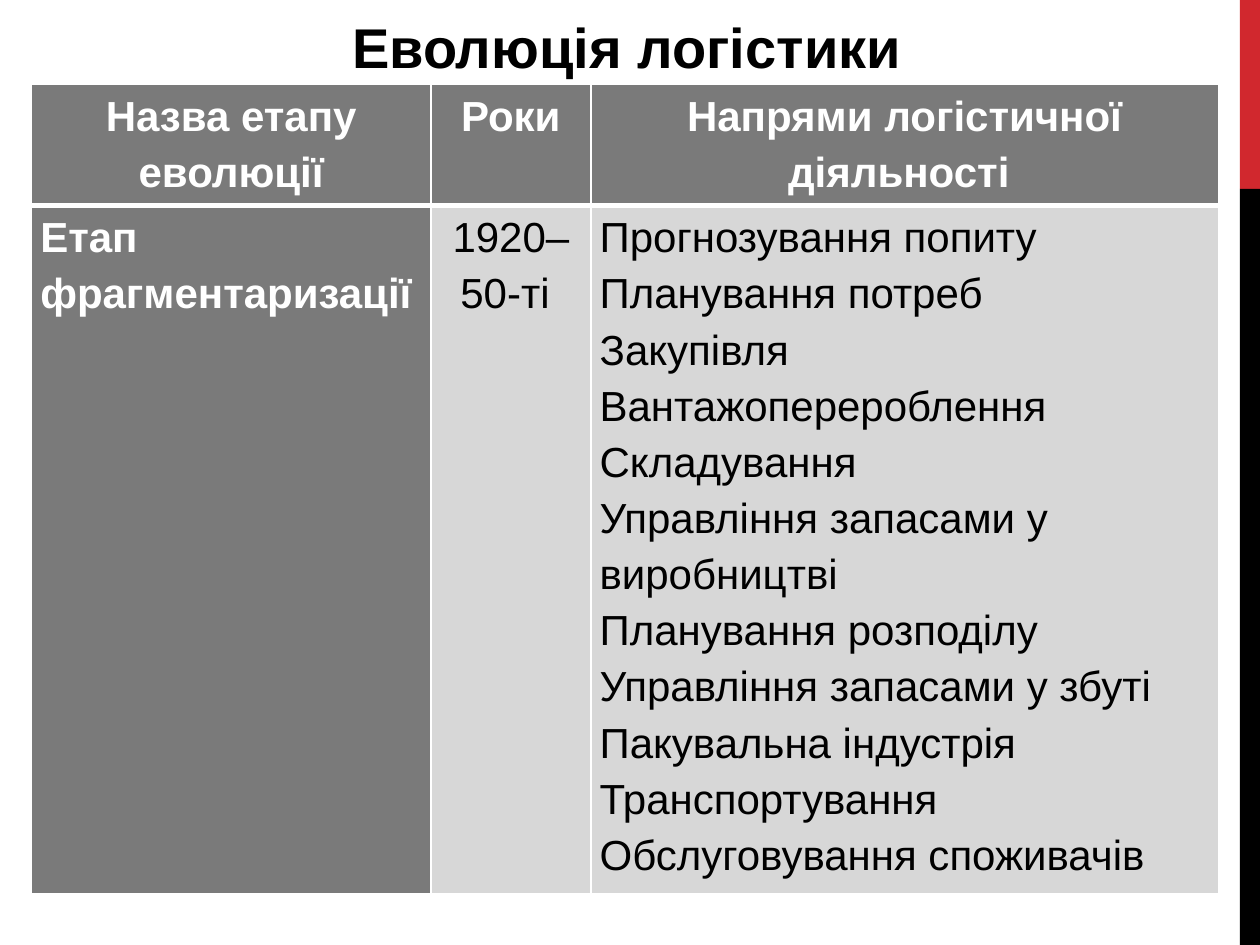
from lxml import etree
from pptx import Presentation
from pptx.dml.color import RGBColor
from pptx.enum.shapes import MSO_SHAPE
from pptx.enum.text import MSO_ANCHOR, PP_ALIGN
from pptx.oxml.ns import qn
from pptx.util import Inches, Pt

RECT = MSO_SHAPE.RECTANGLE
TOP = MSO_ANCHOR.TOP
LEFT, MID = PP_ALIGN.LEFT, PP_ALIGN.CENTER
RED = RGBColor(0xD1, 0x28, 0x2E)
BLACK = RGBColor(0, 0, 0)
WHITE = RGBColor(255, 255, 255)
DARK = RGBColor(0x7A, 0x7A, 0x7A)
PALE = RGBColor(0xD7, 0xD7, 0xD7)

COLS = [3.17, 1.27, 4.98]
ROWS = [0.96, 5.46]
TEXT = [
    ["Назва етапу еволюції", "Роки", "Напрями логістичної діяльності "],
    ["Етап фрагментаризації", "1920–50-ті ", "\n".join([
        "Прогнозування попиту",
        "Планування потреб",
        "Закупівля",
        "Вантажоперероблення",
        "Складування",
        "Управління запасами у виробництві",
        "Планування розподілу",
        "Управління запасами у збуті",
        "Пакувальна індустрія",
        "Транспортування",
        "Обслуговування споживачів",
    ])],
]


def style(para, size, color, bold, align):
    para.alignment = align
    for run in para.runs:
        font = run.font
        font.name, font.size, font.bold = "Arial", Pt(size), bold
        font.color.rgb = color


def edge(cell, side, width):
    line = etree.SubElement(cell._tc.get_or_add_tcPr(), qn("a:ln" + side), w=str(Pt(width)))
    fill = etree.SubElement(line, qn("a:solidFill"))
    etree.SubElement(fill, qn("a:srgbClr"), val=str(WHITE))


deck = Presentation()
deck.slide_width, deck.slide_height = Inches(10), Inches(7.5)
slide = deck.slides.add_slide(deck.slide_layouts[5])
wide, high = deck.slide_width, deck.slide_height

for start, share, color in [(0, 0.2, RED), (0.2, 0.8, BLACK)]:
    bar = slide.shapes.add_shape(RECT, int(wide * 0.984), int(high * start),
                                 int(wide * 0.016), int(high * share))
    bar.shadow.inherit = False
    bar.fill.solid()
    bar.fill.fore_color.rgb = color
    bar.line.fill.background()

frame = slide.shapes.add_table(len(ROWS), len(COLS), Inches(0.25), Inches(0.67),
                               Inches(sum(COLS)), Inches(sum(ROWS)))
table = frame.table
for col, size in zip(table.columns, COLS):
    col.width = Inches(size)
for row, size in zip(table.rows, ROWS):
    row.height = Inches(size)

for r, line in enumerate(TEXT):
    for c, words in enumerate(line):
        cell = table.cell(r, c)
        head = r == 0 or c == 0
        cell.margin_left = cell.margin_right = Inches(0.07)
        cell.margin_top = cell.margin_bottom = 0
        for side in "LRTB":
            edge(cell, side, 3 if (r, side) in [(0, "B"), (1, "T")] else 1)
        cell.fill.solid()
        cell.fill.fore_color.rgb = DARK if head else PALE
        cell.text_frame.text = words
        for para in cell.text_frame.paragraphs:
            para.line_spacing = 1.2
            style(para, 24, WHITE if head else BLACK, head,
                  MID if r == 0 or c == 1 else LEFT)

title = slide.shapes.title
title.left, title.top = Inches(0.04), Inches(0.03)
title.width, title.height = Inches(9.38), Inches(0.94)
body = title.text_frame
body.text = "Еволюція логістики"
body.word_wrap = True
body.vertical_anchor = TOP
body.margin_top = Inches(0.07)
para = body.paragraphs[0]
style(para, 32, BLACK, True, MID)
para._p.get_or_add_pPr().set("indent", str(Inches(0.49)))

deck.save("out.pptx")
